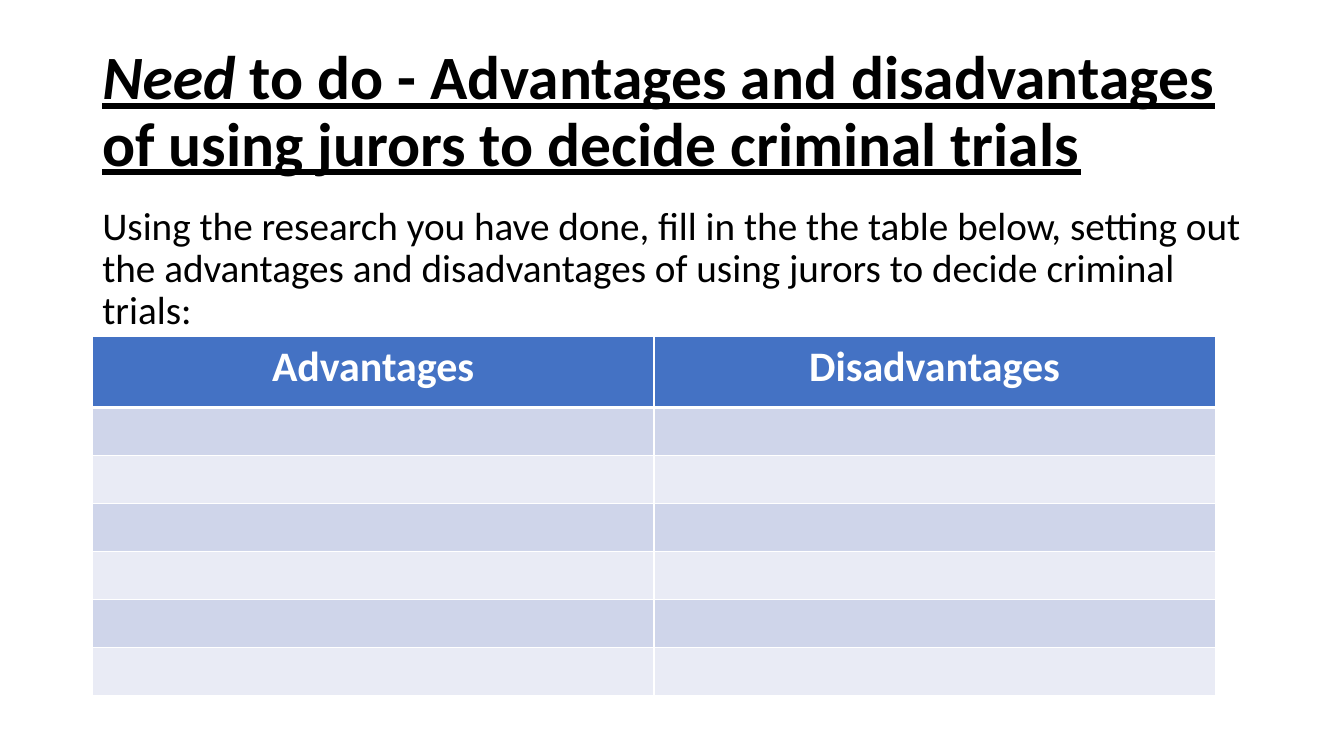
import pptx
import pptx.dml.color
import pptx.enum.text
import pptx.oxml
import pptx.oxml.ns
import pptx.util

Cm = pptx.util.Cm
Pt = pptx.util.Pt
ALIGN = pptx.enum.text.PP_ALIGN
ANCHOR = pptx.enum.text.MSO_ANCHOR

COLOURS = {
    "ink": "000000",
    "paper": "FFFFFF",
    "header": "4472C4",
    "odd_row": "CFD5EA",
    "even_row": "E9EBF5",
}
FONT = "Calibri"
LEFT = 2.33
TEXT_WIDTH = 29.21


def colour(name):
    return pptx.dml.color.RGBColor.from_string(COLOURS[name])


class Worksheet:
    def __init__(self, page):
        self.page = page

    def add_span(self, para, text, size, ink="ink", bold=False, italic=False, underline=False):
        span = para.add_run()
        span.text = text
        font = span.font
        font.name, font.size = FONT, Pt(size)
        font.bold, font.italic, font.underline = bold, italic, underline
        font.color.rgb = colour(ink)

    def add_text(self, top, height, anchor, space_before=0):
        """Add a wrapped text box and return its paragraph."""
        box = self.page.shapes.add_textbox(Cm(LEFT), Cm(top), Cm(TEXT_WIDTH), Cm(height))
        frame = box.text_frame
        frame.word_wrap = True
        frame.vertical_anchor = anchor
        para = frame.paragraphs[0]
        para.line_spacing = 0.9
        para.space_before = Pt(space_before)
        return para

    def border_cell(self, cell, top, bottom):
        """Draw white borders, with widths in points for top and bottom."""
        properties = cell._tc.get_or_add_tcPr()
        for side, width in {"L": 1, "R": 1, "T": top, "B": bottom}.items():
            properties.append(pptx.oxml.parse_xml(
                f'<a:ln{side} {pptx.oxml.ns.nsdecls("a")} w="{Pt(width)}">'
                f'<a:solidFill><a:srgbClr val="{COLOURS["paper"]}"/></a:solidFill>'
                f'</a:ln{side}>'))

    def add_answer_table(self, headings, top, width, header_height, row_height, answer_rows):
        height = header_height + row_height * answer_rows
        table = self.page.shapes.add_table(
            answer_rows + 1, len(headings), Cm(LEFT), Cm(top), Cm(width), Cm(height)).table
        for column in table.columns:
            column.width = Cm(width / len(headings))
        for index, row in enumerate(table.rows):
            row.height = Cm(row_height if index else header_height)
            fill = "header" if index == 0 else "odd_row" if index % 2 else "even_row"
            for cell in row.cells:
                self.border_cell(cell, 3 if index == 1 else 1, 1 if index else 3)
                cell.fill.solid()
                cell.fill.fore_color.rgb = colour(fill)
        for cell, heading in zip(table.rows[0].cells, headings):
            para = cell.text_frame.paragraphs[0]
            para.alignment = ALIGN.CENTER
            self.add_span(para, heading, 30, ink="paper", bold=True)


def main():
    deck = pptx.Presentation()
    deck.slide_width, deck.slide_height = Cm(33.87), Cm(19.05)
    sheet = Worksheet(deck.slides.add_slide(deck.slide_layouts[6]))

    title = sheet.add_text(1.01, 3.68, ANCHOR.MIDDLE)
    sheet.add_span(title, "Need", 44, bold=True, italic=True, underline=True)
    sheet.add_span(
        title, " to do - Advantages and disadvantages of using jurors to decide criminal trials",
        44, bold=True, underline=True)

    task = sheet.add_text(5.07, 12.09, ANCHOR.TOP, space_before=10)
    sheet.add_span(
        task, "Using the research you have done, fill in the the table below, setting out "
        "the advantages and disadvantages of using jurors to decide criminal trials:", 28)

    sheet.add_answer_table(
        ["Advantages", "Disadvantages"], top=8.48, width=28.3,
        header_height=1.79, row_height=1.21, answer_rows=6)
    deck.save("out.pptx")


if __name__ == "__main__":
    main()
